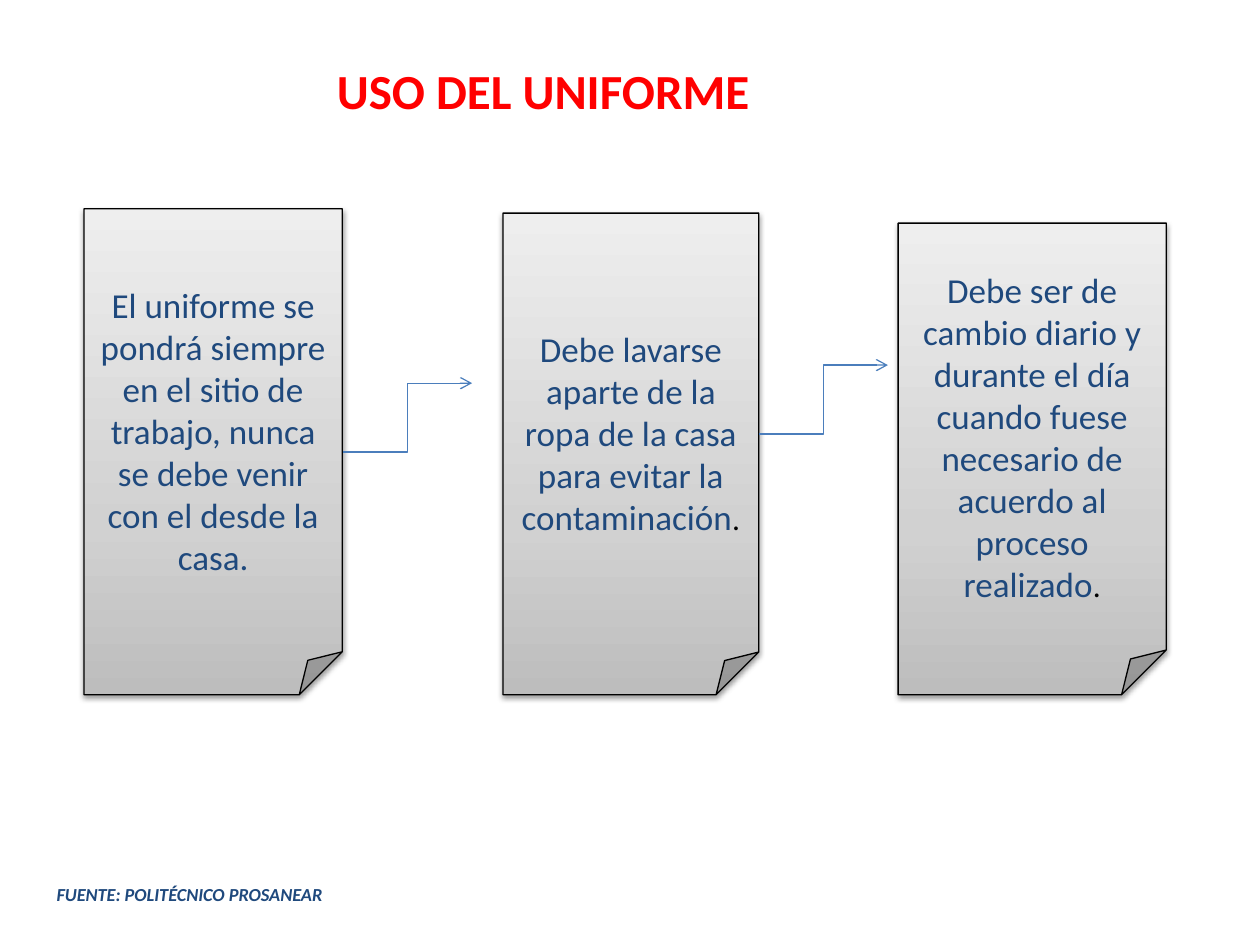
from copy import deepcopy

from lxml import etree
from pptx import Presentation
from pptx.dml.color import RGBColor
from pptx.enum.shapes import MSO_CONNECTOR, MSO_SHAPE
from pptx.enum.text import MSO_ANCHOR, PP_ALIGN
from pptx.oxml.ns import qn
from pptx.util import Pt

CENTER, LEFT = PP_ALIGN.CENTER, PP_ALIGN.LEFT
MIDDLE = MSO_ANCHOR.MIDDLE
FOLDED_CORNER = MSO_SHAPE.FOLDED_CORNER
ELBOW = MSO_CONNECTOR.ELBOW

FONT = "Calibri"
COLORS = {"title": "FF0000", "text": "1F497D", "black": "000000", "arrow": "4B7EBC"}
CARD_GRADIENT = [(0, "BDBDBD"), (0.35, "D1D1D1"), (1, "EEEEEE")]

CARD_BOTTOM = 397
CARDS = [  # left, top, width, text, closing mark in black
    (48, 119.3, 147.6, "El uniforme se pondrá siempre en el sitio de trabajo, "
     "nunca se debe venir con el desde la casa.", ""),
    (287.4, 121.8, 146.2, "Debe lavarse aparte de la ropa de la casa para evitar "
     "la contaminación", "."),
    (513.2, 127.5, 153.2, "Debe ser de cambio diario y durante el día cuando fuese "
     "necesario de acuerdo al proceso realizado", "."),
]
ARROW_STARTS = [(196, 258.3), (433.6, 248)]
ARROW_WIDTH, ARROW_RISE = 73.8, 39.3


def rgb(name):
    return RGBColor.from_string(COLORS[name])


def style_paragraph(paragraph, size, color, alignment, bold=False, italic=False):
    paragraph.alignment = alignment
    font = paragraph.font
    font.name, font.size = FONT, Pt(size)
    font.bold, font.italic = bold, italic
    font.color.rgb = rgb(color)


def add_title(slide, text):
    title = slide.shapes.title
    title.left, title.top, title.width, title.height = Pt(30), Pt(31), Pt(567), Pt(41)
    title.text_frame.text = text
    style_paragraph(title.text_frame.paragraphs[0], 28, "title", CENTER, bold=True)


def fill_with_gradient(shape):
    shape.fill.gradient()
    shape.fill.gradient_angle = 90
    stop_list = shape.element.spPr.find(".//" + qn("a:gsLst"))
    stop_list.append(deepcopy(stop_list[0]))
    for stop, (position, color) in zip(shape.fill.gradient_stops, CARD_GRADIENT):
        stop.position = position
        stop.color.rgb = RGBColor.from_string(color)


def add_soft_shadow(shape):
    shape.shadow.inherit = False
    effects = shape.element.spPr.find(qn("a:effectLst"))
    shadow = etree.SubElement(
        effects, qn("a:outerShdw"), blurRad=str(Pt(3.1)), dist=str(Pt(1.6)),
        dir="5400000", rotWithShape="0")
    color = etree.SubElement(shadow, qn("a:srgbClr"), val=COLORS["black"])
    etree.SubElement(color, qn("a:alpha"), val="38000")


def add_card(slide, left, top, width, text, closing_mark):
    card = slide.shapes.add_shape(
        FOLDED_CORNER, Pt(left), Pt(top), Pt(width), Pt(CARD_BOTTOM - top))
    fill_with_gradient(card)
    card.line.color.rgb = rgb("black")
    card.line.width = Pt(0.75)
    add_soft_shadow(card)
    card.text_frame.word_wrap = True
    card.text_frame.vertical_anchor = MIDDLE
    paragraph = card.text_frame.paragraphs[0]
    paragraph.add_run().text = text
    style_paragraph(paragraph, 20, "text", CENTER)
    if closing_mark:
        run = paragraph.add_run()
        run.text = closing_mark
        run.font.size = Pt(18)
        run.font.color.rgb = rgb("black")


def add_elbow_arrow(slide, left, bottom):
    arrow = slide.shapes.add_connector(
        ELBOW, Pt(left), Pt(bottom), Pt(left + ARROW_WIDTH), Pt(bottom - ARROW_RISE))
    arrow.line.color.rgb = rgb("arrow")
    arrow.line.width = Pt(0.75)
    properties = arrow.element.spPr
    etree.SubElement(properties.find(qn("a:ln")), qn("a:tailEnd"), type="arrow")
    etree.SubElement(properties, qn("a:effectLst"))


def add_source_line(slide, text):
    box = slide.shapes.add_textbox(Pt(25.2), Pt(501), Pt(641), Pt(20))
    box.text_frame.word_wrap = True
    box.text_frame.text = text
    style_paragraph(box.text_frame.paragraphs[0], 10.5, "text", LEFT,
                    bold=True, italic=True)


def main():
    presentation = Presentation()
    presentation.slide_width, presentation.slide_height = Pt(720), Pt(540)
    title_only = presentation.slide_layouts[5]
    slide = presentation.slides.add_slide(title_only)
    add_title(slide, "USO DEL UNIFORME ")
    for card in CARDS:
        add_card(slide, *card)
    for start in ARROW_STARTS:
        add_elbow_arrow(slide, *start)
    add_source_line(slide, "FUENTE: POLITÉCNICO PROSANEAR")
    presentation.save("out.pptx")


if __name__ == "__main__":
    main()
